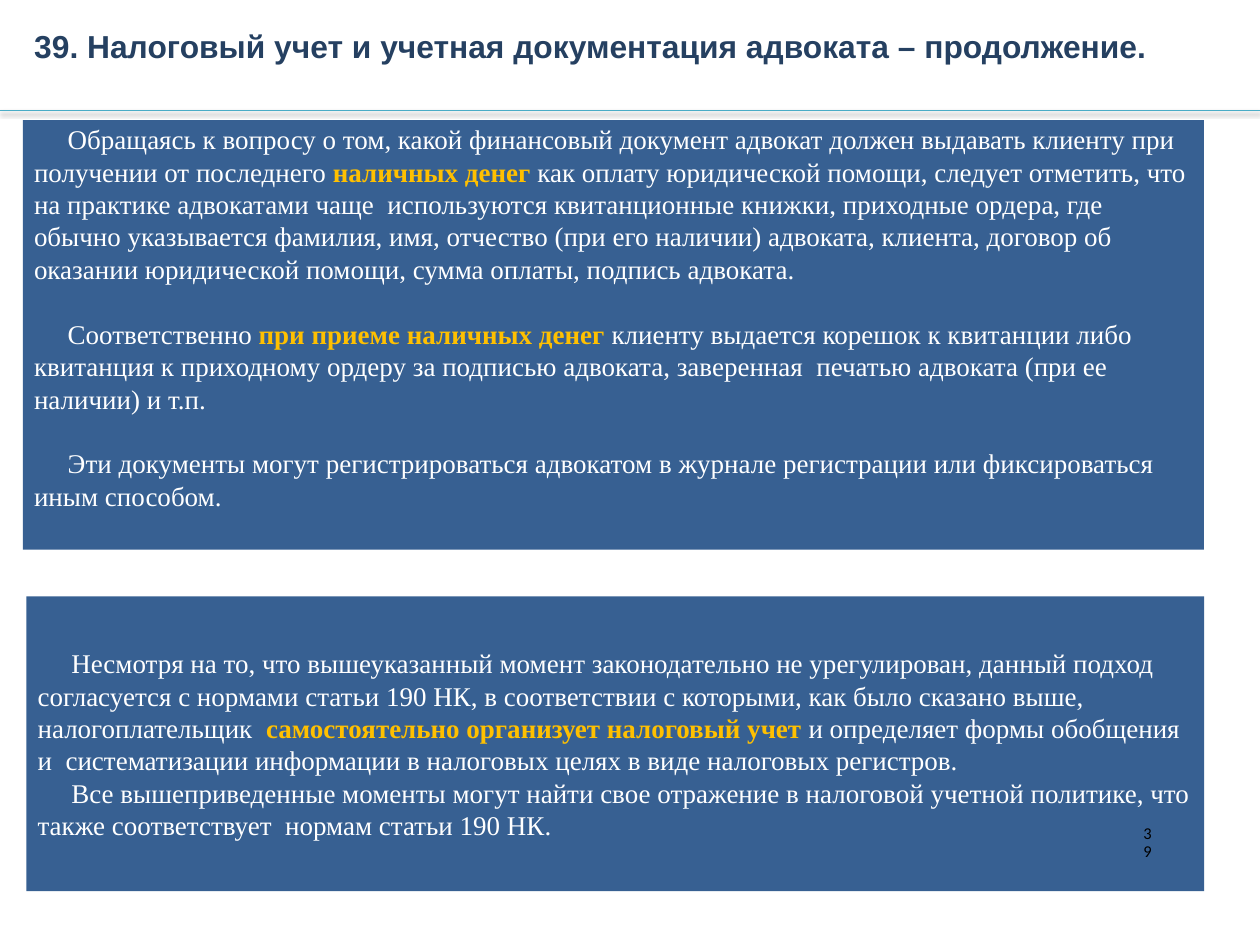
import pptx
import pptx.dml.color
import pptx.enum.shapes
import pptx.enum.text
import pptx.oxml
import pptx.oxml.ns
import pptx.util

Pt = pptx.util.Pt
Inches = pptx.util.Inches
ANCHOR = pptx.enum.text.MSO_ANCHOR
W, H = Inches(11.03), Inches(8.27)
COLORS = {"panel": "376092", "text": "FFFFFF", "accent": "FFC000",
          "title": "254061", "rule": "4BACC6", "number": "000000"}
LINE = Pt(20.45)
INDENT = Pt(21.25)

# Every second piece of a paragraph is emphasised.
CASH = [
    ["Обращаясь к вопросу о том, какой финансовый документ адвокат должен "
     "выдавать клиенту при получении от последнего ",
     "наличных денег",
     " как оплату юридической помощи, следует отметить, что на практике "
     "адвокатами чаще  используются квитанционные книжки, приходные ордера, где "
     "обычно указывается фамилия, имя, отчество (при его наличии) адвоката, "
     "клиента, договор об оказании юридической помощи, сумма оплаты, подпись "
     "адвоката."],
    ["Соответственно ",
     "при приеме наличных денег ",
     "клиенту выдается корешок к квитанции либо квитанция к приходному ордеру за "
     "подписью адвоката, заверенная  печатью адвоката (при ее наличии) и т.п."],
    ["Эти документы могут регистрироваться адвокатом в журнале регистрации или "
     "фиксироваться иным способом."],
]
POLICY = [
    ["Несмотря на то, что вышеуказанный момент законодательно не урегулирован, "
     "данный подход согласуется с нормами статьи 190 НК, в соответствии с "
     "которыми, как было сказано выше, налогоплательщик  ",
     "самостоятельно организует налоговый учет ",
     "и определяет формы обобщения и  систематизации информации в налоговых "
     "целях в виде налоговых регистров."],
    ["Все вышеприведенные моменты могут найти свое отражение в налоговой учетной "
     "политике, что также соответствует  нормам статьи 190 НК."],
]


def rgb(name):
    return pptx.dml.color.RGBColor.from_string(COLORS[name])


def place(box):
    """Turn percentages of the slide into left, top, width and height."""
    return [int(share * full / 100) for share, full in zip(box, (W, H, W, H))]


def add_run(p, text, *, size, font, color, bold=False):
    r = p.add_run()
    r.text = text
    r.font.size = Pt(size)
    r.font.name = font
    r.font.bold = bold
    r.font.color.rgb = rgb(color)


def set_indent(p, left=0, first=0):
    pPr = p._p.get_or_add_pPr()
    pPr.set("marL", str(int(left)))
    pPr.set("indent", str(int(first)))


def title(s, box, text):
    sp = s.shapes.title
    sp.left, sp.top, sp.width, sp.height = place(box)
    tf = sp.text_frame
    tf.auto_size = pptx.enum.text.MSO_AUTO_SIZE.NONE
    tf.vertical_anchor = ANCHOR.BOTTOM
    p = tf.paragraphs[0]
    p.alignment = pptx.enum.text.PP_ALIGN.LEFT
    p.line_spacing = 0.9
    add_run(p, text, size=20, font="Arial", color="title", bold=True)


def header_rule(s, y):
    left, top, width, _ = place((0, y, 100, 0))
    line = s.shapes.add_connector(pptx.enum.shapes.MSO_CONNECTOR.STRAIGHT,
                                  left, top, left + width, top)
    line.line.color.rgb = rgb("rule")
    line.line.width = Pt(0.5)
    line._element.spPr.append(pptx.oxml.parse_xml(
        f'<a:effectLst {pptx.oxml.ns.nsdecls("a")}>'
        f'<a:outerShdw blurRad="{Pt(3.1)}" dist="{Pt(1.8)}" dir="5400000" '
        'rotWithShape="0"><a:srgbClr val="000000"><a:alpha val="35000"/>'
        '</a:srgbClr></a:outerShdw></a:effectLst>'))


def panel(s, box, paragraphs, gap=0, top=0.05, bottom=0.05):
    sp = s.shapes.add_shape(pptx.enum.shapes.MSO_SHAPE.RECTANGLE, *place(box))
    sp.shadow.inherit = False
    sp.fill.solid()
    sp.fill.fore_color.rgb = rgb("panel")
    sp.line.fill.background()
    tf = sp.text_frame
    tf.word_wrap = True
    tf.vertical_anchor = ANCHOR.MIDDLE
    tf.margin_top, tf.margin_bottom = Inches(top), Inches(bottom)
    for i, pieces in enumerate(paragraphs):
        p = tf.add_paragraph() if i else tf.paragraphs[0]
        p.alignment = pptx.enum.text.PP_ALIGN.LEFT
        p.line_spacing = LINE
        p.space_before = gap if i else 0
        set_indent(p, first=INDENT)
        for j, text in enumerate(pieces):
            strong = j % 2 == 1
            add_run(p, text, size=17, font="Times New Roman", bold=strong,
                    color="accent" if strong else "text")


def page_number(s, box, text):
    tf = s.shapes.add_textbox(*place(box)).text_frame
    tf.word_wrap = True
    tf.auto_size = pptx.enum.text.MSO_AUTO_SIZE.SHAPE_TO_FIT_TEXT
    tf.margin_left = tf.margin_right = tf.margin_top = tf.margin_bottom = 0
    p = tf.paragraphs[0]
    p.line_spacing = Pt(10.8)
    set_indent(p, left=Inches(0.12))
    add_run(p, text, size=10.4, font="Calibri", color="number")


def main():
    prs = pptx.Presentation()
    prs.slide_width, prs.slide_height = W, H
    s = prs.slides.add_slide(prs.slide_layouts[5])
    title(s, (1.81, 0.6, 91.2, 6.9),
          "39. Налоговый учет и учетная документация адвоката – продолжение.")
    header_rule(s, 11.73)
    panel(s, (1.81, 12.7, 93.74, 45.47), CASH, gap=LINE, top=0.02, bottom=0.33)
    panel(s, (2.09, 63.12, 93.47, 31.2), POLICY)
    page_number(s, (89.66, 87.42, 1.9, 1.81), "39")
    prs.save("out.pptx")


if __name__ == "__main__":
    main()
